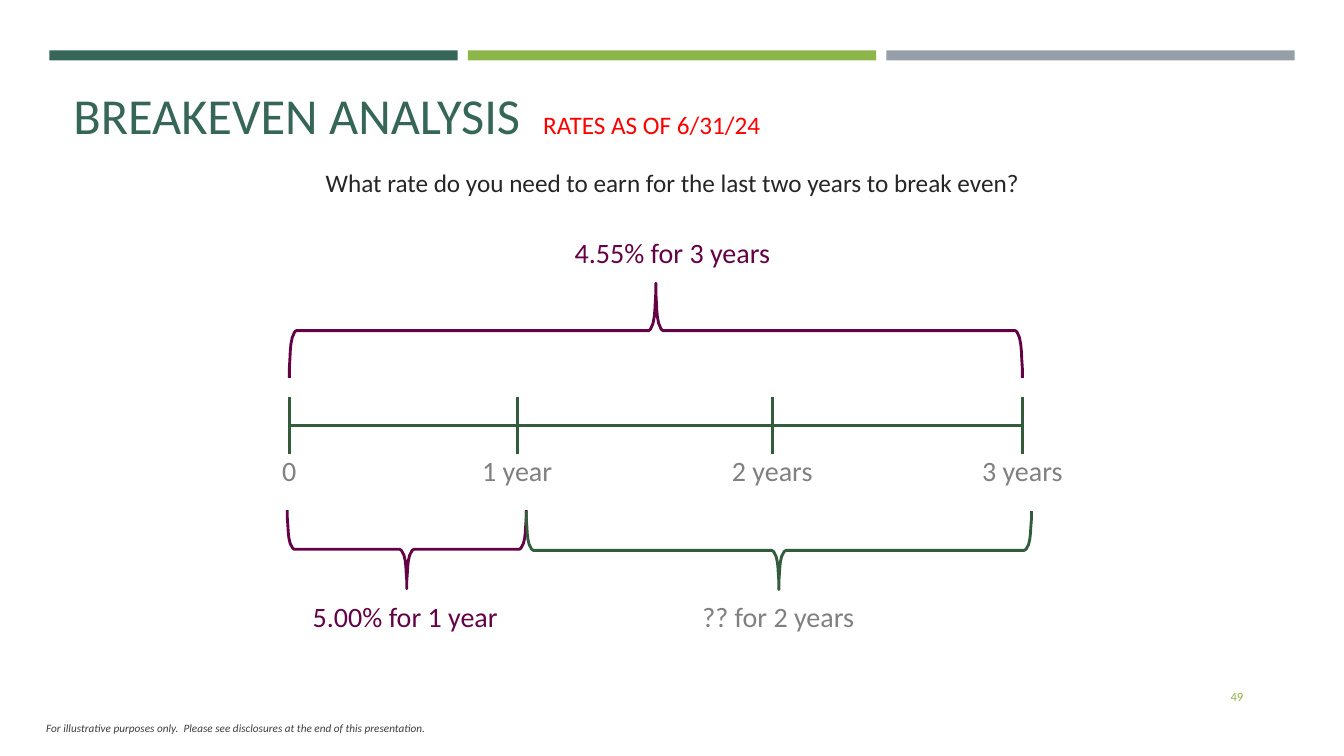
from lxml import etree
from pptx import Presentation
from pptx import util as u
from pptx.dml.color import RGBColor
from pptx.enum import shapes, text
from pptx.oxml import ns

PX = 9144  # 100 px to the inch
FONT = "Calibri"
TEAL = RGBColor(0x36, 0x66, 0x58)
LIME = RGBColor(0x8C, 0xB6, 0x4A)
SLATE = RGBColor(0x96, 0x9F, 0xA7)
RED = RGBColor(0xFF, 0x00, 0x00)
INK = RGBColor(0x26, 0x26, 0x26)
FOOTNOTE = RGBColor(0x3E, 0x3E, 0x3E)
GRAY = RGBColor(0x80, 0x80, 0x80)
PLUM = RGBColor(0x64, 0x02, 0x46)
GREEN = RGBColor(0x32, 0x5C, 0x3C)
LINE_WIDTH = u.Pt(2.04)

LEFT, CENTER, RIGHT = (text.PP_ALIGN.LEFT, text.PP_ALIGN.CENTER,
                       text.PP_ALIGN.RIGHT)
TOP, MIDDLE, BOTTOM = (text.MSO_ANCHOR.TOP, text.MSO_ANCHOR.MIDDLE,
                       text.MSO_ANCHOR.BOTTOM)

# One curl of a brace, from its tip (0, 0) to the bar (1, 1)
CURL = [(0, 0), (0, 0.2), (0.08, 0.4), (0.13, 0.56), (0.22, 0.71),
        (0.4, 0.85), (0.75, 0.97), (1, 1)]
CURL_WIDTH = 7


def px(*lengths):
    return [u.Emu(length * PX) for length in lengths]


def style(font, size, color):
    font.name, font.size, font.color.rgb = FONT, u.Pt(size), color


def add_text(slide, box, wording, size, color, align=LEFT, anchor=TOP,
             margins=(0, 1)):
    frame = slide.shapes.add_textbox(*px(*box)).text_frame
    frame.word_wrap = True
    frame.vertical_anchor = anchor
    side, edge = px(*margins)
    frame.margin_left = frame.margin_right = side
    frame.margin_top = frame.margin_bottom = edge
    paragraph = frame.paragraphs[0]
    paragraph.text = wording
    paragraph.alignment = align
    style(paragraph.font, size, color)
    return frame


def add_line(slide, x1, y1, x2, y2):
    line = slide.shapes.add_connector(shapes.MSO_CONNECTOR.STRAIGHT,
                                      *px(x1, y1, x2, y2))
    line.line.color.rgb = GREEN
    line.line.width = LINE_WIDTH
    etree.SubElement(line._element.spPr, ns.qn("a:effectLst"))


def add_brace(slide, left, y, width, height, color):
    """Arms start at y; the point lies at y + height (negative: upward)."""
    middle = left + width / 2
    arm = [(left + CURL_WIDTH * a, y + height / 2 * b) for a, b in CURL]
    point = [(middle - CURL_WIDTH * a, y + height - height / 2 * b)
             for a, b in reversed(CURL)]
    half = arm + point
    mirrored = [(2 * middle - x, py) for x, py in reversed(half[:-1])]
    outline = [(x * PX, py * PX) for x, py in half + mirrored]
    builder = slide.shapes.build_freeform(*outline[0], scale=1.0)
    builder.add_line_segments(outline[1:], close=False)
    brace = builder.convert_to_shape()
    brace.shadow.inherit = False
    brace.fill.background()
    brace.line.color.rgb = color
    brace.line.width = LINE_WIDTH


def add_header(slide, left, top, width):
    # Three colour bars
    gap = 10
    bar_width = (width - 2 * gap) // 3
    for i, color in enumerate((TEAL, LIME, SLATE)):
        bar = slide.shapes.add_shape(
            shapes.MSO_SHAPE.RECTANGLE,
            *px(left + i * (bar_width + gap), top, bar_width, 10))
        bar.shadow.inherit = False
        bar.fill.solid()
        bar.fill.fore_color.rgb = color
        bar.line.fill.background()

    # Title, with the date set at a tab stop
    frame = add_text(slide, (left + 14, top + 8, 1196, 90),
                     "BREAKEVEN ANALYSIS", 36, TEAL, anchor=BOTTOM,
                     margins=(10, 5))
    title = frame.paragraphs[0]
    date = title.add_run()
    date.text = "\tRATES AS OF 6/31/24"
    style(date.font, 18, RED)
    tabs = etree.Element(ns.qn("a:tabLst"))
    etree.SubElement(tabs, ns.qn("a:tab"), pos=str(466 * PX), algn="l")
    title._p.get_or_add_pPr().insert(0, tabs)


def add_question(slide, box):
    frame = add_text(
        slide, box,
        "What rate do you need to earn for the last two years to break even?",
        18, INK, CENTER)
    long_rate = frame.add_paragraph()
    long_rate.text = "4.55% for 3 years"
    long_rate.alignment = CENTER
    long_rate.space_before = u.Pt(27)
    style(long_rate.font, 20, PLUM)


def add_timeline(slide, left, top, width):
    right = left + width
    axis_y = top + 141

    # Three-year span above the axis
    add_brace(slide, left, top + 94, width, -94, PLUM)

    # Axis, ticks and year labels
    add_line(slide, left, axis_y, right, axis_y)
    ticks = {"0": 0, "1 year": 226, "2 years": 479, "3 years": width}
    for label, offset in ticks.items():
        x = left + offset
        add_line(slide, x, axis_y - 28, x, axis_y + 28)
        add_text(slide, (x - 60, axis_y + 27, 120, 36), label, 20, GRAY,
                 CENTER)

    # One-year and two-year spans below the axis
    spans = [("5.00% for 1 year", -2, 237, 84, PLUM, PLUM, 402),
             ("?? for 2 years", 235, 501, 85, GREEN, GRAY, 772)]
    for label, offset, span, drop, line_color, color, label_x in spans:
        add_brace(slide, left + offset, axis_y + drop, span, 78, line_color)
        add_text(slide, (label_x - 110, axis_y + 172, 220, 36), label, 20,
                 color, CENTER)


def add_footer(slide, left, top):
    frame = add_text(
        slide, (left, top, 987, 24),
        "For illustrative purposes only.  Please see disclosures at the end "
        "of this presentation.", 8, FOOTNOTE, margins=(10, 5))
    frame.paragraphs[0].font.italic = True
    add_text(slide, (left + 1092, top - 40, 115, 40), "49", 9, LIME, RIGHT,
             MIDDLE, margins=(10, 5))


def main():
    deck = Presentation()
    deck.slide_width, deck.slide_height = px(1333, 750)
    slide = deck.slides.add_slide(deck.slide_layouts[6])
    add_header(slide, 49, 50, 1235)
    add_question(slide, (305, 165, 724, 102))
    add_timeline(slide, 287, 281, 727)
    add_footer(slide, 36, 711)
    deck.save("out.pptx")


if __name__ == "__main__":
    main()
